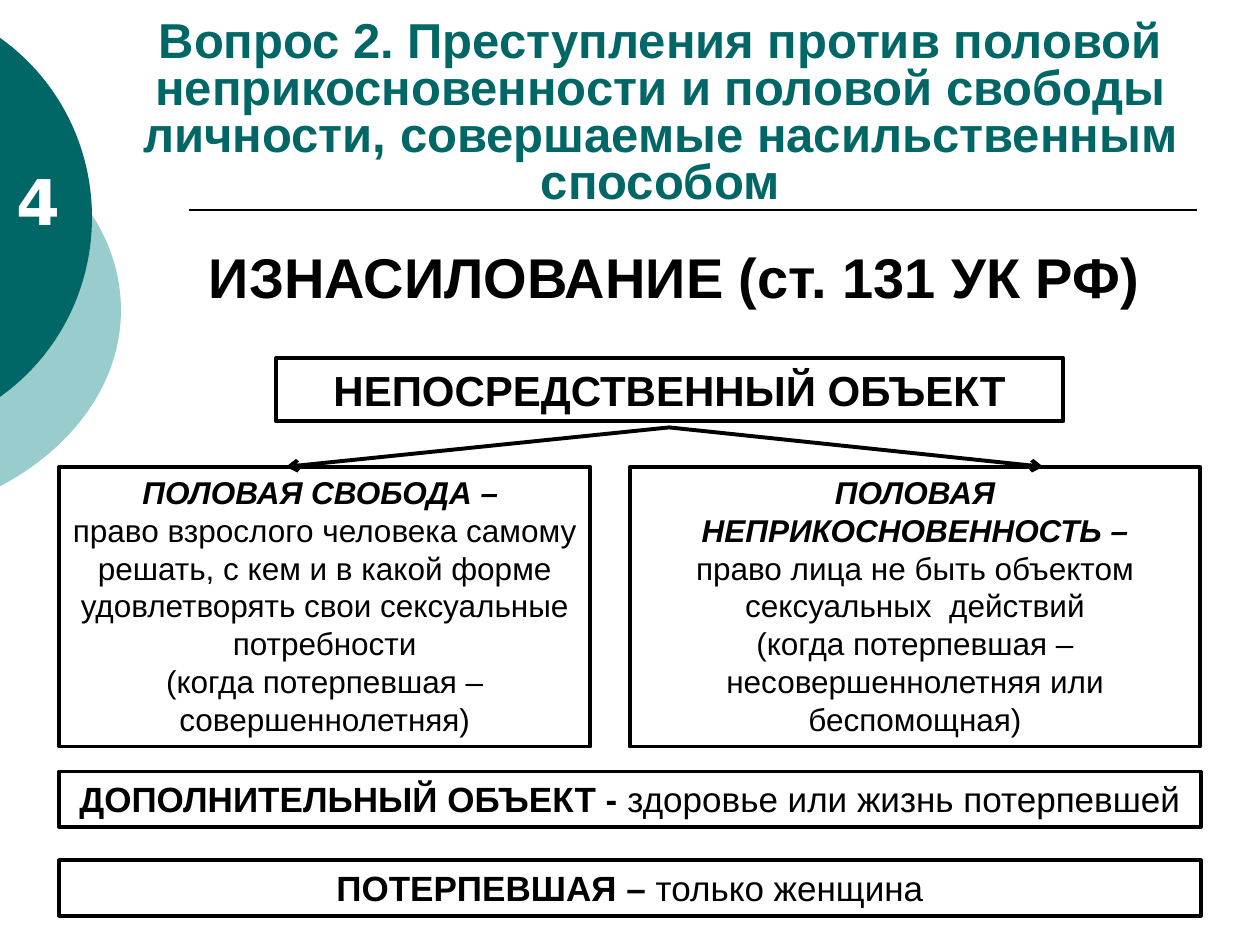
from pptx import Presentation, util as u
from pptx.dml.color import RGBColor
from pptx.enum import shapes, text
from pptx.oxml import ns
from lxml import etree

TEAL = RGBColor(0x00, 0x66, 0x66)
PALE = RGBColor(0x99, 0xCC, 0xCC)
BLACK = RGBColor(0, 0, 0)
WHITE = RGBColor(255, 255, 255)

# The grid has 100 columns and 100 rows
COL, ROW = u.Inches(0.1), u.Inches(0.075)
LEFT, WIDE = 4.7, 90.6


def place(box):
    """Turn left, top, width, height in grid units into lengths."""
    return [round(n * unit) for n, unit in zip(box, (COL, ROW, COL, ROW))]


def bow(slide, box, top, tall, color):
    """Draw the part of a disc that shows right of the slide's left edge."""
    x, y, w, h = place(box)
    edge, bulge = -x, w + x
    half = round(tall * ROW / 2)
    mid = round(top * ROW) - y + half
    pen = slide.shapes.build_freeform(0, 0)
    pen.add_line_segments([(w, 0), (w, h)])
    disc = pen.convert_to_shape()
    disc.left, disc.top, disc.width, disc.height = x, y, w, h

    track = disc._element.find(".//" + ns.qn("a:path"))
    for part in list(track):
        track.remove(part)
    track.set("w", str(w))
    track.set("h", str(h))
    # Shares of the bulge and of half the chord
    steps = (("moveTo", [(0, -1)]),
             ("cubicBezTo", [(0.63, -0.77), (1, -0.4), (1, 0)]),
             ("cubicBezTo", [(1, 0.4), (0.63, 0.77), (0, 1)]),
             ("close", []))
    for tag, dots in steps:
        step = etree.SubElement(track, ns.qn("a:" + tag))
        for a, b in dots:
            dot = etree.SubElement(step, ns.qn("a:pt"))
            dot.set("x", str(round(edge + a * bulge)))
            dot.set("y", str(round(mid + b * half)))

    disc.shadow.inherit = False
    disc.fill.solid()
    disc.fill.fore_color.rgb = color
    disc.line.fill.background()


def write(shape, paras, size, color=BLACK, name="Arial",
          align=text.PP_ALIGN.CENTER, wrap=True, space=None):
    """Fill a shape with paragraphs, each a list of (words, bold, italic)."""
    frame = shape.text_frame
    frame.word_wrap = wrap
    frame.auto_size = text.MSO_AUTO_SIZE.SHAPE_TO_FIT_TEXT
    frame.vertical_anchor = text.MSO_ANCHOR.TOP
    for n, runs in enumerate(paras):
        para = frame.add_paragraph() if n else frame.paragraphs[0]
        para.alignment = align
        para.line_spacing = space
        font = para.font
        font.name, font.size = name, u.Pt(size)
        font.color.rgb = color
        for words, bold, slant in runs:
            run = para.add_run()
            run.text = words
            run.font.bold, run.font.italic = bold, slant


def label(slide, box, words, size, **style):
    shape = slide.shapes.add_textbox(*place(box))
    write(shape, [[(words, True, False)]], size, **style)


def card(slide, box, paras, size):
    shape = slide.shapes.add_shape(shapes.MSO_SHAPE.RECTANGLE, *place(box))
    shape.shadow.inherit = False
    shape.fill.background()
    shape.line.color.rgb = BLACK
    shape.line.width = u.Pt(2.25)
    write(shape, paras, size)


def rule(slide, start, end, width, arrow=False):
    ends = place((*start, *end))
    line = slide.shapes.add_connector(shapes.MSO_CONNECTOR.STRAIGHT, *ends)
    line.line.color.rgb = BLACK
    line.line.width = u.Pt(width)
    if arrow:
        tip = etree.SubElement(line.line._get_or_add_ln(), ns.qn("a:tailEnd"))
        tip.set("type", "arrow")
    etree.SubElement(line._element.spPr, ns.qn("a:effectLst"))


def margin(slide):
    bow(slide, (-35.4, 10, 45, 45.6), 14.13, 37.34, PALE)
    bow(slide, (-26.5, 0, 33.8, 46), 4, 38, TEAL)
    rule(slide, (15, 22.22), (95, 22.22), 1)
    label(slide, (0.3, 16.53, 5.6, 9.33), "4", 36, color=WHITE,
          name="DejaVu Sans", align=text.PP_ALIGN.LEFT)


def header(slide):
    label(slide, (7.8, 1.55, 89.2, 28.67),
          "Вопрос 2. Преступления против половой неприкосновенности и половой "
          "свободы личности, совершаемые насильственным способом",
          28, color=TEAL, space=0.8)


def tree(slide, top):
    """Draw the main object, its heading and the two kinds it splits into."""
    card(slide, (21.9, top, 62.5, 6.67),
         [[("НЕПОСРЕДСТВЕННЫЙ ОБЪЕКТ", True, False)]], 24)
    label(slide, (15.6, top - 12.9, 76.5, 8.53),
          "ИЗНАСИЛОВАНИЕ (ст. 131 УК РФ)",
          32, align=text.PP_ALIGN.LEFT, wrap=False)
    kinds = (
        (LEFT, 42.15, 22.7, "ПОЛОВАЯ СВОБОДА – ",
         "право взрослого человека самому решать, с кем и в какой форме "
         "удовлетворять свои сексуальные потребности",
         "(когда потерпевшая – совершеннолетняя)"),
        (50, 45.25, 82.8, "ПОЛОВАЯ НЕПРИКОСНОВЕННОСТЬ –",
         "право лица не быть объектом сексуальных  действий",
         "(когда потерпевшая – несовершеннолетняя или беспомощная)"),
    )
    low = top + 11.5
    for left, width, _, term, sense, case in kinds:
        paras = [[(term, True, True)], [(sense, False, False)],
                 [(case, False, False)]]
        card(slide, (left, low, width, 29.6), paras, 18)
    for kind in kinds:
        rule(slide, (53.1, top + 7.33), (kind[2], low), 2.25, arrow=True)


def notes(slide, top):
    rows = (("ДОПОЛНИТЕЛЬНЫЙ ОБЪЕКТ - ", "здоровье или жизнь потерпевшей"),
            ("ПОТЕРПЕВШАЯ – ", "только женщина"))
    for n, (term, sense) in enumerate(rows):
        card(slide, (LEFT, top + n * 9.4, WIDE, 5.87),
             [[(term, True, False), (sense, False, False)]], 20)


def main():
    deck = Presentation()
    deck.slide_width, deck.slide_height = 100 * COL, 100 * ROW
    slide = deck.slides.add_slide(deck.slide_layouts[6])
    margin(slide)
    header(slide)
    tree(slide, 37.9)
    notes(slide, 81.65)
    deck.save("out.pptx")


if __name__ == "__main__":
    main()
